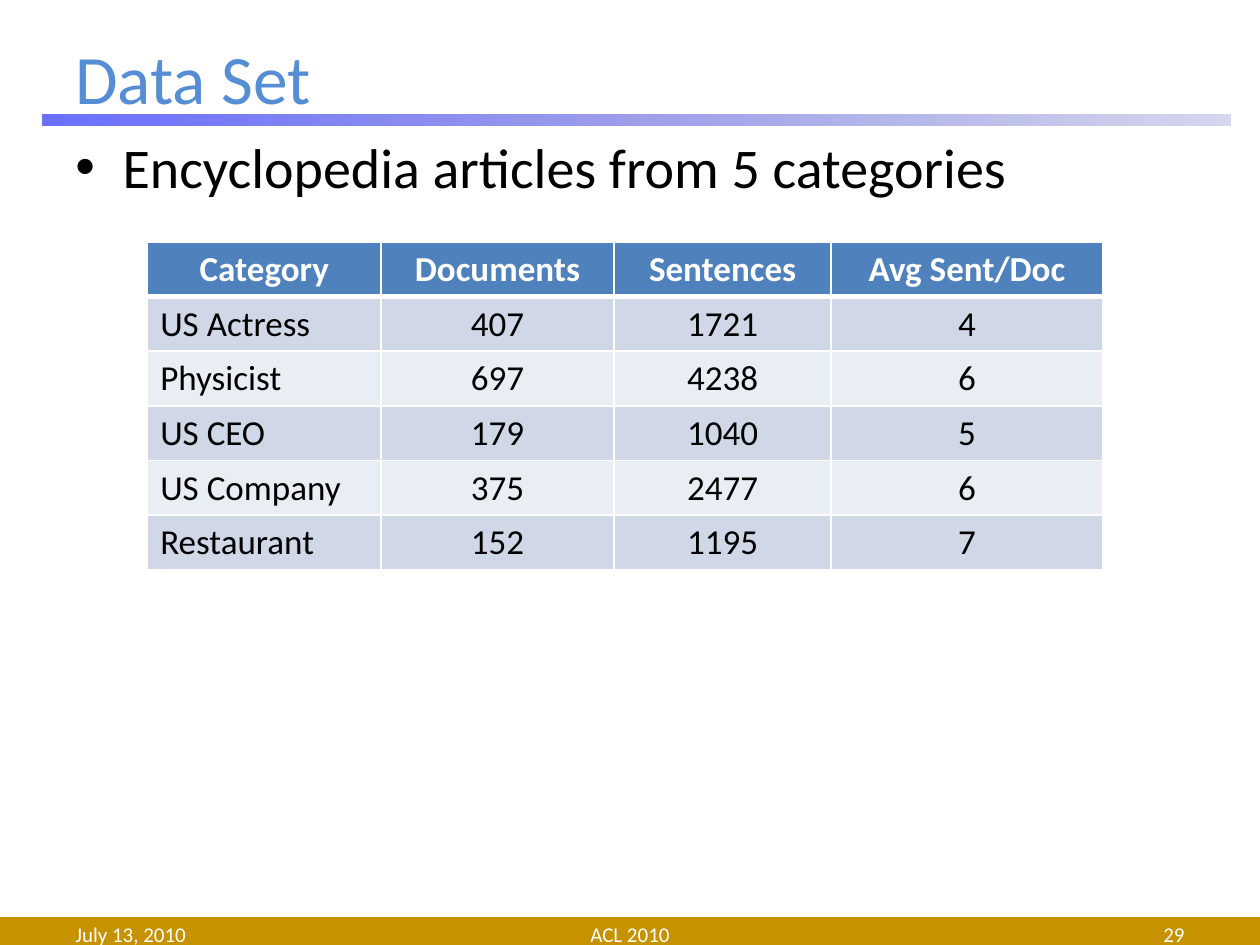
from collections import namedtuple
from dataclasses import dataclass

from lxml.etree import SubElement
from pptx import Presentation
from pptx.dml.color import RGBColor as RGB
from pptx.enum.shapes import MSO_SHAPE as Shape
from pptx.enum.text import MSO_ANCHOR as Anchor, PP_ALIGN as Align
from pptx.oxml.ns import qn
from pptx.util import Pt

Box = namedtuple("Box", "left top width height")


@dataclass(frozen=True)
class Theme:
    font: str = "Calibri"
    title: str = "558ED5"
    text: str = "000000"
    light: str = "FFFFFF"
    footer: str = "C69200"
    header: str = "4F81BD"
    bands: tuple = ("D0D8E8", "E9EDF4")
    # Rule gradient stops: colour and opacity in percent
    rule: tuple = (("464AFC", 80), ("3235B4", 20))
    title_size: float = 39.6
    body_size: float = 32
    table_size: float = 20
    footer_size: float = 12


THEME = Theme()

HEADINGS = ("Category", "Documents", "Sentences", "Avg Sent/Doc")
DATA = (
    ("US Actress", 407, 1721, 4),
    ("Physicist", 697, 4238, 6),
    ("US CEO", 179, 1040, 5),
    ("US Company", 375, 2477, 6),
    ("Restaurant", 152, 1195, 7),
)
COLUMN_WIDTHS = (133.3, 133.3, 124, 155.2)


def in_points(box):
    return [Pt(length) for length in box]


def write(frame, text, size, color, align=Align.LEFT, bold=False):
    paragraph = frame.paragraphs[0]
    paragraph.text = str(text)
    paragraph.alignment = align
    font = paragraph.runs[0].font
    formats = {"name": THEME.font, "size": Pt(size), "bold": bold}
    for name, value in formats.items():
        setattr(font, name, value)
    font.color.rgb = RGB.from_string(color)
    return paragraph


def add_text(slide, box, text, size, color, align=Align.LEFT, anchor=Anchor.MIDDLE):
    frame = slide.shapes.add_textbox(*in_points(box)).text_frame
    frame.word_wrap = True
    frame.vertical_anchor = anchor
    return write(frame, text, size, color, align)


def add_bar(slide, box):
    bar = slide.shapes.add_shape(Shape.RECTANGLE, *in_points(box))
    bar.shadow.inherit = False
    bar.line.fill.background()
    return bar


def add_title(slide, box):
    add_text(slide, box, "Data Set", THEME.title_size, THEME.title)


def add_rule(slide, box):
    fill = add_bar(slide, box).fill
    fill.gradient()
    fill.gradient_angle = 0
    for stop, (color, opacity) in zip(fill.gradient_stops, THEME.rule):
        stop.color.rgb = RGB.from_string(color)
        color_element = stop._gs.find(qn("a:srgbClr"))
        SubElement(color_element, qn("a:alpha"), val=str(opacity * 1000))


def add_body(slide, box):
    paragraph = add_text(slide, box, "Encyclopedia articles from 5 categories",
                         THEME.body_size, THEME.text, anchor=Anchor.TOP)
    properties = paragraph._p.get_or_add_pPr()
    indent = Pt(27)
    properties.set("marL", str(indent))
    properties.set("indent", str(-indent))
    SubElement(properties, qn("a:buFont"), typeface="Arial")
    SubElement(properties, qn("a:buChar"), char="•")


def add_borders(cell, bottom_width):
    properties = cell._tc.get_or_add_tcPr()
    widths = {"lnL": 1, "lnR": 1, "lnT": 1, "lnB": bottom_width}
    for position, (side, width) in enumerate(widths.items()):
        line = SubElement(properties, qn(f"a:{side}"), w=str(Pt(width)))
        fill = SubElement(line, qn("a:solidFill"))
        SubElement(fill, qn("a:srgbClr"), val=THEME.light)
        # Borders come before the cell fill
        properties.insert(position, line)


def add_data_table(slide, box):
    rows = (HEADINGS, *DATA)
    table = slide.shapes.add_table(len(rows), len(HEADINGS), *in_points(box)).table
    for column, width in zip(table.columns, COLUMN_WIDTHS):
        column.width = Pt(width)
    for row_index, values in enumerate(rows):
        is_header = row_index == 0
        fill = THEME.header if is_header else THEME.bands[(row_index - 1) % 2]
        color = THEME.light if is_header else THEME.text
        for column_index, value in enumerate(values):
            cell = table.cell(row_index, column_index)
            cell.fill.solid()
            cell.fill.fore_color.rgb = RGB.from_string(fill)
            is_label = column_index == 0 and not is_header
            align = Align.LEFT if is_label else Align.CENTER
            write(cell.text_frame, value, THEME.table_size, color, align, is_header)
            add_borders(cell, 3 if is_header else 1)


def add_footer(slide, box):
    bar = add_bar(slide, box)
    bar.fill.solid()
    bar.fill.fore_color.rgb = RGB.from_string(THEME.footer)
    margin, side_width, middle_width = 36, 168, 228
    right = box.left + box.width
    parts = (
        ("July 13, 2010", box.left + margin, side_width, Align.LEFT),
        ("ACL 2010", box.left + (box.width - middle_width) / 2, middle_width, Align.CENTER),
        ("29", right - margin - side_width, side_width, Align.RIGHT),
    )
    for text, left, width, align in parts:
        add_text(slide, Box(left, box.top + 4, width, 12), text,
                 THEME.footer_size, THEME.light, align)


def main():
    presentation = Presentation()
    presentation.slide_width, presentation.slide_height = Pt(720), Pt(540)
    slide = presentation.slides.add_slide(presentation.slide_layouts[6])

    # Frame of the page
    add_footer(slide, Box(0, 524, 720, 18))
    add_rule(slide, Box(24.2, 65.7, 679, 6.3))

    # Content
    add_title(slide, Box(36, 21.6, 648, 44.6))
    add_body(slide, Box(36, 72, 648, 410.4))
    add_data_table(slide, Box(84.4, 138.2, sum(COLUMN_WIDTHS), 187.2))

    presentation.save("out.pptx")


if __name__ == "__main__":
    main()
